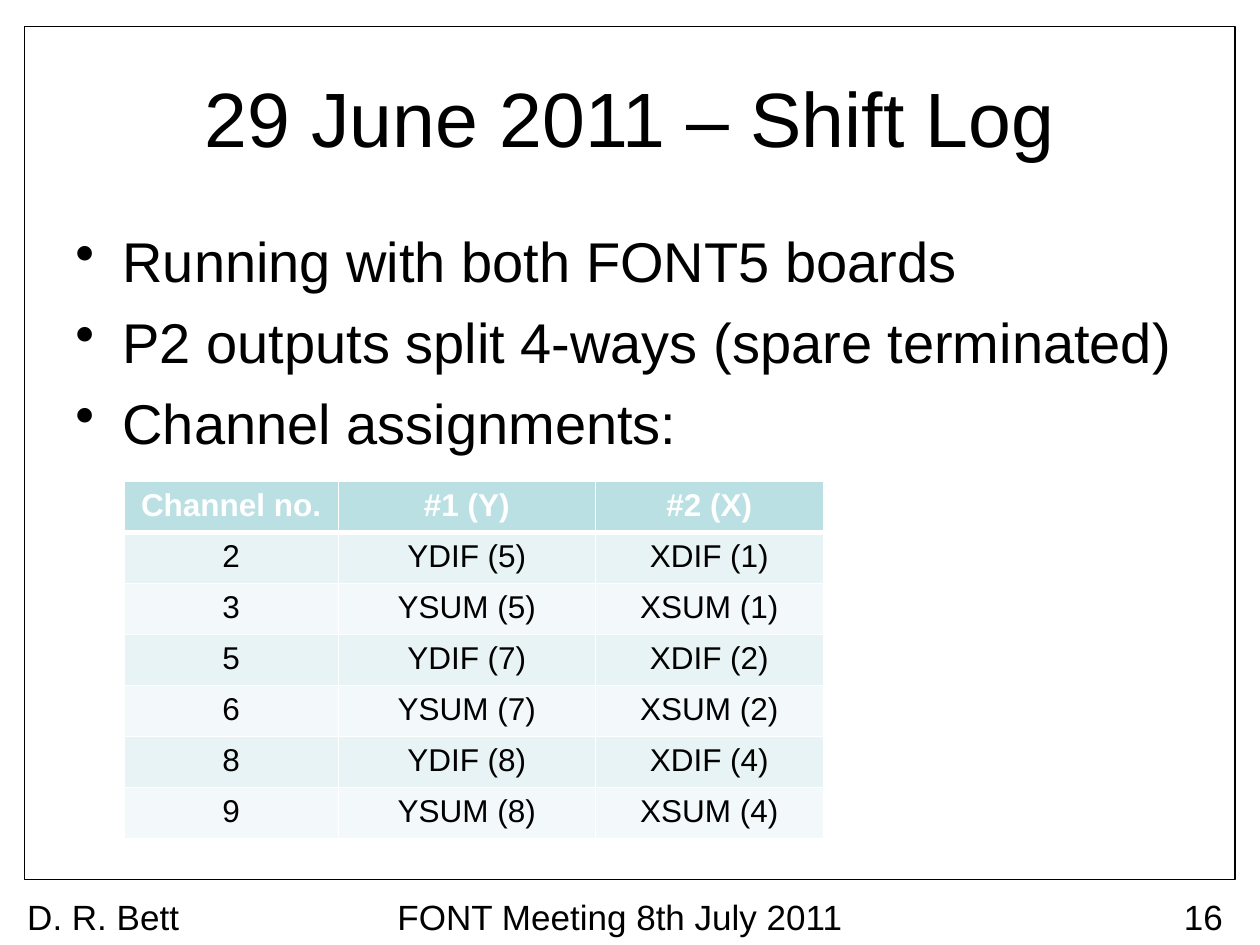
from pptx import Presentation
from pptx.dml.color import RGBColor
from pptx.enum.shapes import MSO_SHAPE
from pptx.enum.text import MSO_ANCHOR, PP_ALIGN
from pptx.oxml import parse_xml
from pptx.oxml.ns import nsdecls
from pptx.util import Cm, Pt

COLORS = {
    "text": "000000",
    "white": "FFFFFF",
    "header": "BBE0E3",
    "band_dark": "E7F3F4",
    "band_light": "F3F9FA",
}
FONT = "Arial"
BULLETS = [
    "Running with both FONT5 boards",
    "P2 outputs split 4-ways (spare terminated)",
    "Channel assignments:",
]
CHANNELS = [
    ("Channel no.", "#1 (Y)", "#2 (X)"),
    ("2", "YDIF (5)", "XDIF (1)"),
    ("3", "YSUM (5)", "XSUM (1)"),
    ("5", "YDIF (7)", "XDIF (2)"),
    ("6", "YSUM (7)", "XSUM (2)"),
    ("8", "YDIF (8)", "XDIF (4)"),
    ("9", "YSUM (8)", "XSUM (4)"),
]


def color(name):
    return RGBColor.from_string(COLORS[name])


def style_paragraph(paragraph, size, align=PP_ALIGN.LEFT, color_name="text", bold=False):
    paragraph.alignment = align
    font = paragraph.font
    font.name, font.size, font.bold = FONT, Pt(size), bold
    font.color.rgb = color(color_name)


def add_text(slide, box, lines, size, align=PP_ALIGN.LEFT, anchor=MSO_ANCHOR.TOP):
    """Add a wrapped text box, one paragraph per line, and return its frame."""
    frame = slide.shapes.add_textbox(*map(Cm, box)).text_frame
    frame.word_wrap = True
    frame.vertical_anchor = anchor
    frame.text = "\n".join(lines)
    for paragraph in frame.paragraphs:
        style_paragraph(paragraph, size, align)
    return frame


def add_frame(slide, box):
    shape = slide.shapes.add_shape(MSO_SHAPE.RECTANGLE, *map(Cm, box))
    shape.shadow.inherit = False
    shape.fill.background()
    shape.line.color.rgb = color("text")
    shape.line.width = Pt(0.75)


def add_bullets(slide, box, lines):
    frame = add_text(slide, box, lines, 32)
    for paragraph in frame.paragraphs:
        paragraph.space_before = Pt(7.7)
        properties = paragraph._p.get_or_add_pPr()
        properties.set("marL", str(Cm(0.95)))
        properties.set("indent", str(-Cm(0.95)))
        properties.append(parse_xml(f'<a:buChar {nsdecls("a")} char="•"/>'))


def set_borders(cell, bottom_width):
    """Draw white borders; they must precede the fill in the cell properties."""
    properties = cell._tc.get_or_add_tcPr()
    widths = {"lnL": 1, "lnR": 1, "lnT": 1, "lnB": bottom_width}
    for index, (side, width) in enumerate(widths.items()):
        properties.insert(index, parse_xml(
            f'<a:{side} {nsdecls("a")} w="{Pt(width)}"><a:solidFill>'
            f'<a:srgbClr val="{COLORS["white"]}"/></a:solidFill></a:{side}>'))


def add_channel_table(slide, left, top, column_widths, row_height, rows):
    table = slide.shapes.add_table(
        len(rows), len(column_widths), Cm(left), Cm(top),
        Cm(sum(column_widths)), Cm(row_height * len(rows))).table
    for column, width in zip(table.columns, column_widths):
        column.width = Cm(width)
    for row_index, values in enumerate(rows):
        is_header = row_index == 0
        band = "band_dark" if row_index % 2 else "band_light"
        for column_index, value in enumerate(values):
            cell = table.cell(row_index, column_index)
            cell.text = value
            style_paragraph(cell.text_frame.paragraphs[0], 18, PP_ALIGN.CENTER,
                            "white" if is_header else "text", is_header)
            cell.fill.solid()
            cell.fill.fore_color.rgb = color("header" if is_header else band)
            set_borders(cell, 3 if is_header else 1)


def add_footer(slide, left, top, width, height):
    author_width, number_width = 3.6, 1.4
    parts = [
        (0, author_width, "D. R. Bett", PP_ALIGN.LEFT),
        (author_width, 17.2, "FONT Meeting 8th July 2011", PP_ALIGN.CENTER),
        (width - number_width, number_width, "16", PP_ALIGN.RIGHT),
    ]
    for offset, part_width, text, align in parts:
        add_text(slide, (left + offset, top, part_width, height), [text], 20, align)


def build_slide(presentation):
    slide = presentation.slides.add_slide(presentation.slide_layouts[6])
    add_frame(slide, (0.5, 0.53, 24.4, 17.2))
    add_text(slide, (1.27, 0.76, 22.86, 3.18), ["29 June 2011 – Shift Log"], 44,
             PP_ALIGN.CENTER, MSO_ANCHOR.MIDDLE)
    add_bullets(slide, (1.27, 4.45, 22.86, 12.57), BULLETS)
    add_channel_table(slide, 2.5, 9.7, (4.32, 5.18, 4.6), 1.03, CHANNELS)
    add_footer(slide, 0.3, 17.93, 24.6, 0.81)


def main():
    presentation = Presentation()
    presentation.slide_width, presentation.slide_height = Cm(25.4), Cm(19.05)
    build_slide(presentation)
    presentation.save("out.pptx")


if __name__ == "__main__":
    main()
